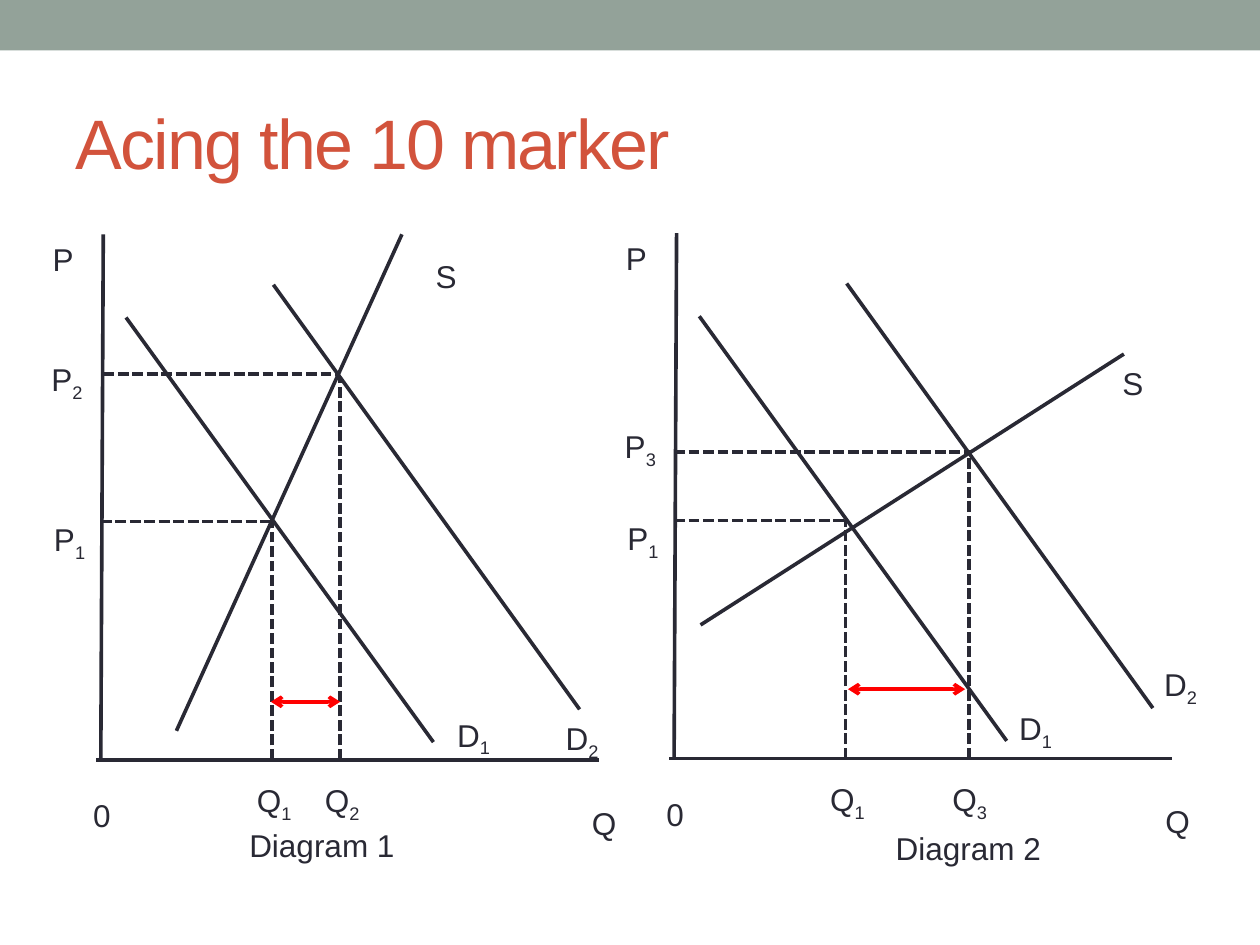
from dataclasses import dataclass

import pptx
import pptx.dml.color
import pptx.enum.dml
import pptx.enum.shapes
import pptx.enum.text
import pptx.oxml.ns
import pptx.oxml.xmlchemy
import pptx.util
from pptx.util import Inches


@dataclass(frozen=True)
class Theme:
    font: str = "Arial"
    ink: str = "292934"
    band: str = "93A299"
    title: str = "D2533C"
    gap: str = "FF0000"
    title_size: int = 40
    label_size: int = 18
    line_width: float = 2.08


@dataclass(frozen=True)
class Line:
    x1: float
    y1: float
    x2: float
    y2: float
    dashed: bool = False


@dataclass(frozen=True)
class Label:
    text: str
    x: float
    y: float
    width: float
    subscript: str = ""
    wrap: bool = False


@dataclass(frozen=True)
class Diagram:
    dx: float
    dy: float
    lines: tuple[Line, ...]
    labels: tuple[Label, ...]
    gap: Line


THEME = Theme()

# Parts that both diagrams share, placed for the left one
SHARED_LINES = (
    Line(0.82, 1.86, 0.8, 6.03),   # price axis
    Line(4.75, 6.03, 0.76, 6.03),  # quantity axis
    Line(3.44, 5.89, 1, 2.52),     # first demand curve
    Line(4.6, 5.63, 2.17, 2.26),   # second demand curve
    Line(0.8, 4.14, 2.15, 4.14, dashed=True),
    Line(2.16, 6.03, 2.16, 4.14, dashed=True),
)
SHARED_LABELS = (
    Label("Q", 4.6, 6.33, 0.4),
    Label("P", 0.32, 1.86, 0.34),
    Label("0", 0.64, 6.27, 0.36),
    Label("P", 0.33, 4.08, 0.45, "1"),
    Label("Q", 1.94, 6.15, 0.76, "1", wrap=True),
)

# Supply, new equilibrium and captions of each diagram
DIAGRAMS = (
    Diagram(
        0, 0,
        lines=(
            Line(1.4, 5.8, 3.19, 1.86),
            Line(0.82, 2.97, 2.7, 2.97, dashed=True),
            Line(2.7, 6.03, 2.7, 2.99, dashed=True),
        ),
        labels=(
            Label("P", 0.31, 2.81, 0.45, "2"),
            Label("Q", 2.48, 6.15, 0.95, "2", wrap=True),
            Label("D", 3.53, 5.63, 0.5, "1"),
            Label("D", 4.39, 5.66, 0.5, "2"),
            Label("S", 3.36, 1.99, 0.34),
            Label("Diagram 1", 1.88, 6.51, 1.48),
        ),
        gap=Line(2.15, 5.57, 2.7, 5.57),
    ),
    Diagram(
        4.55, -0.01,
        lines=(
            Line(5.56, 4.96, 8.92, 2.81),
            Line(5.35, 3.59, 7.69, 3.59, dashed=True),
            Line(7.69, 6.02, 7.69, 3.57, dashed=True),
        ),
        labels=(
            Label("P", 4.86, 3.34, 0.45, "3"),
            Label("Q", 7.46, 6.14, 0.95, "3", wrap=True),
            Label("D", 7.99, 5.58, 0.5, "1"),
            Label("D", 9.14, 5.23, 0.5, "2"),
            Label("S", 8.81, 2.84, 0.34),
            Label("Diagram 2", 7.01, 6.53, 1.48),
        ),
        gap=Line(6.73, 5.47, 7.66, 5.47),
    ),
)


def rgb(value: str) -> pptx.dml.color.RGBColor:
    return pptx.dml.color.RGBColor.from_string(value)


def set_font(font, size: int, color: str) -> None:
    font.name = THEME.font
    font.size = pptx.util.Pt(size)
    font.color.rgb = rgb(color)


def add_title(slide, text: str) -> None:
    title = slide.shapes.title
    title.left, title.top = Inches(0.5), Inches(0.58)
    title.width, title.height = Inches(9), Inches(1.08)
    title.text_frame.vertical_anchor = pptx.enum.text.MSO_ANCHOR.MIDDLE
    para = title.text_frame.paragraphs[0]
    para.alignment = pptx.enum.text.PP_ALIGN.LEFT
    set_font(para.font, THEME.title_size, THEME.title)
    span = para.add_run()
    span.text = text
    span.font._element.set("spc", "-100")


def add_band(slide) -> None:
    band = slide.shapes.add_shape(
        pptx.enum.shapes.MSO_SHAPE.RECTANGLE, 0, 0, Inches(10), Inches(0.4))
    band.shadow.inherit = False
    band.fill.solid()
    band.fill.fore_color.rgb = rgb(THEME.band)
    band.line.fill.background()


def add_line(slide, line: Line, color: str, dx: float = 0, dy: float = 0,
             arrows: bool = False) -> None:
    connector = slide.shapes.add_connector(
        pptx.enum.shapes.MSO_CONNECTOR.STRAIGHT,
        Inches(line.x1 + dx), Inches(line.y1 + dy),
        Inches(line.x2 + dx), Inches(line.y2 + dy))
    connector.line.color.rgb = rgb(color)
    connector.line.width = pptx.util.Pt(THEME.line_width)
    if line.dashed:
        # The short system dash has no enum member
        connector.line.dash_style = pptx.enum.dml.MSO_LINE.DASH
        dash = connector.line._ln.find(pptx.oxml.ns.qn("a:prstDash"))
        dash.set("val", "sysDash")
    if arrows:
        for end in ("a:headEnd", "a:tailEnd"):
            arrow = pptx.oxml.xmlchemy.OxmlElement(end)
            arrow.set("type", "arrow")
            connector.line._ln.append(arrow)
    connector._element.spPr.append(pptx.oxml.xmlchemy.OxmlElement("a:effectLst"))


def add_label(slide, label: Label, dx: float = 0, dy: float = 0) -> None:
    box = slide.shapes.add_textbox(
        Inches(label.x + dx), Inches(label.y + dy), Inches(label.width), Inches(0.4))
    box.text_frame.word_wrap = label.wrap
    box.text_frame.auto_size = pptx.enum.text.MSO_AUTO_SIZE.SHAPE_TO_FIT_TEXT
    para = box.text_frame.paragraphs[0]
    set_font(para.font, THEME.label_size, THEME.ink)
    para.add_run().text = label.text
    if label.subscript:
        span = para.add_run()
        span.text = label.subscript
        span.font._element.set("baseline", "-25000")


def add_diagram(slide, diagram: Diagram) -> None:
    for line in SHARED_LINES:
        add_line(slide, line, THEME.ink, diagram.dx, diagram.dy)
    for line in diagram.lines:
        add_line(slide, line, THEME.ink)
    for label in SHARED_LABELS:
        add_label(slide, label, diagram.dx, diagram.dy)
    for label in diagram.labels:
        add_label(slide, label)
    add_line(slide, diagram.gap, THEME.gap, arrows=True)


def main() -> None:
    deck = pptx.Presentation()
    deck.slide_width, deck.slide_height = Inches(10), Inches(7.5)
    page = deck.slides.add_slide(deck.slide_layouts[5])
    add_band(page)
    add_title(page, "Acing the 10 marker")
    for diagram in DIAGRAMS:
        add_diagram(page, diagram)
    deck.save("out.pptx")


if __name__ == "__main__":
    main()
